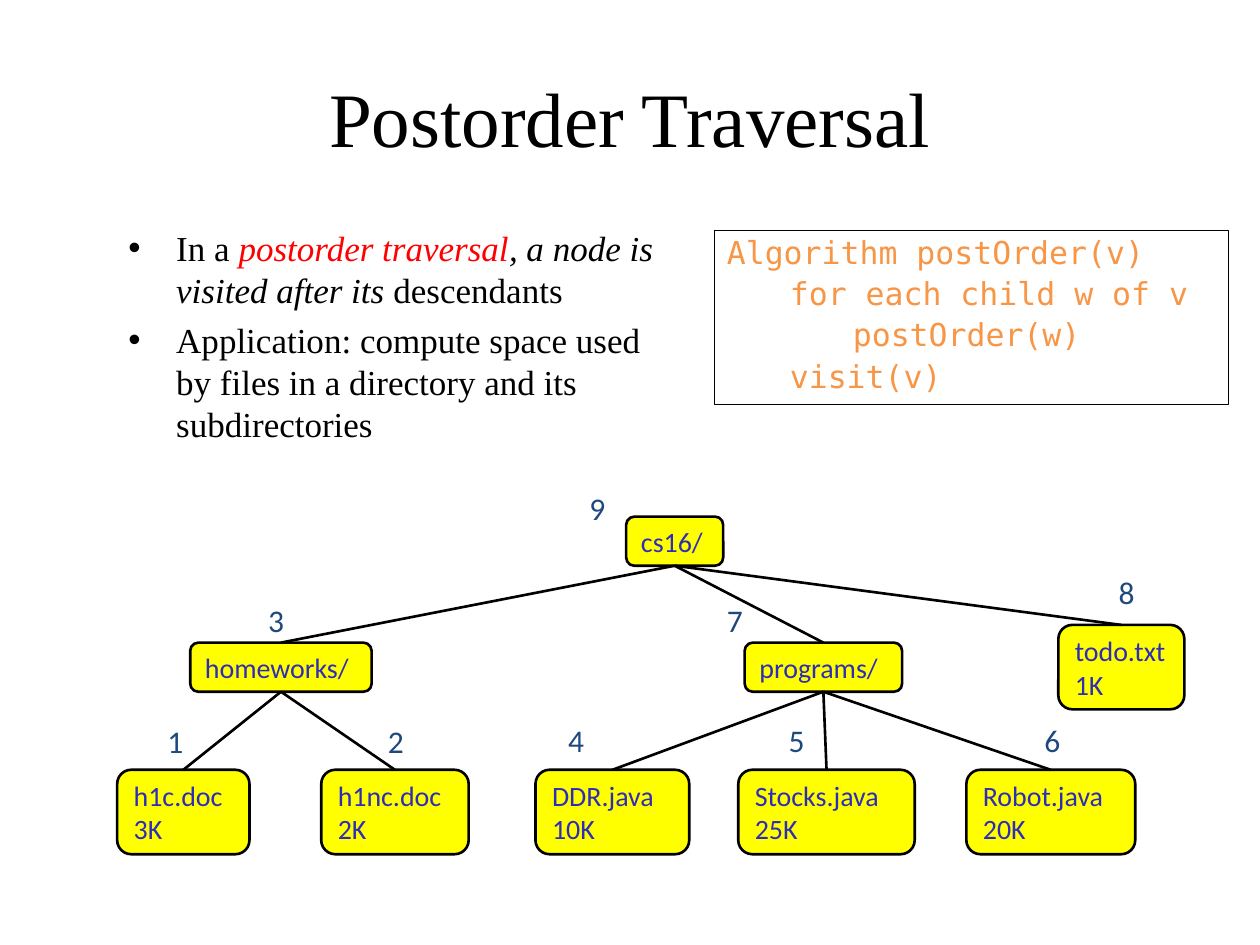
from lxml.etree import SubElement
from pptx import Presentation
from pptx.dml.color import RGBColor
from pptx.enum.shapes import MSO_CONNECTOR as CONN, MSO_SHAPE as SHAPE
from pptx.enum.text import MSO_ANCHOR as ANCHOR, MSO_AUTO_SIZE as AUTO, PP_ALIGN as ALIGN
from pptx.oxml.ns import qn
from pptx.util import Inches, Pt

COLORS = {"black": "000000", "red": "FF0000", "code": "F79646",
          "yellow": "FFFF00", "node": "2D2DB9", "order": "1F497D"}
SERIF, MONO, SANS = "Times New Roman", "DejaVu Sans Mono", "Calibri"
BOTTOM, TOP = 2, 0
ROOT_H, LEAF_H, LEAF_TOP = 0.39, 0.67, 6.11

# name: (parent, text, left, top, width, height)
NODES = {
    "cs16": (None, "cs16/", 4.97, 4.1, 0.77, ROOT_H),
    "homeworks": ("cs16", "homeworks/", 1.51, 5.1, 1.44, ROOT_H),
    "programs": ("cs16", "programs/", 5.91, 5.1, 1.25, ROOT_H),
    "todo": ("cs16", "todo.txt\n1K", 8.4, 4.96, 1, LEAF_H),
    "h1c": ("homeworks", "h1c.doc\n3K", 0.93, LEAF_TOP, 1.05, LEAF_H),
    "h1nc": ("homeworks", "h1nc.doc\n2K", 2.55, LEAF_TOP, 1.17, LEAF_H),
    "ddr": ("programs", "DDR.java\n10K", 4.25, LEAF_TOP, 1.22, LEAF_H),
    "stocks": ("programs", "Stocks.java\n25K", 5.86, LEAF_TOP, 1.4, LEAF_H),
    "robot": ("programs", "Robot.java\n20K", 7.67, LEAF_TOP, 1.34, LEAF_H),
}
# left and top of the visit numbers 1 to 9
VISITS = [(1.23, 5.68), (2.98, 5.68), (2.03, 4.72), (4.41, 5.67), (6.16, 5.67),
          (8.19, 5.67), (5.67, 4.72), (8.78, 4.5), (4.58, 3.83)]
BULLETS = [
    [("In a ", "black", False), ("postorder traversal", "red", True),
     (", a node is visited after its ", "black", True), ("descendants", "black", False)],
    [("Application: compute space used by files in a directory and its subdirectories",
      "black", False)],
]
CODE = ["Algorithm postOrder(v)", "for each child w of v", "\tpostOrder(w)", "visit(v)"]


def rgb(name):
    return RGBColor.from_string(COLORS[name])


def set_all(obj, **values):
    for name, value in values.items():
        setattr(obj, name, value)


def style_run(r, size, font, color, italic=False):
    set_all(r.font, size=Pt(size), name=font, italic=italic)
    r.font.color.rgb = rgb(color)


def write(p, text, *style):
    """Set a paragraph's text, line breaks included, in one style."""
    p.text = text
    for r in p.runs:
        style_run(r, *style)


def set_indent(p, left, first=0, bullet=None):
    pPr = p._p.get_or_add_pPr()
    pPr.set("marL", str(Inches(left)))
    pPr.set("indent", str(Inches(first)))
    if bullet:
        SubElement(pPr, qn("a:buFont"), typeface="Arial")
        SubElement(pPr, qn("a:buChar"), char=bullet)


def add_text(s, box, **frame):
    tf = s.shapes.add_textbox(*map(Inches, box)).text_frame
    set_all(tf, **{"word_wrap": True, "auto_size": AUTO.NONE, **frame})
    return tf


def paragraphs(tf, items):
    """Yield a paragraph of the frame with each item."""
    for i, item in enumerate(items):
        yield (tf.add_paragraph() if i else tf.paragraphs[0]), item


def add_box(s, kind, box, line_width, fill=None):
    sp = s.shapes.add_shape(kind, *map(Inches, box))
    sp.shadow.inherit = False
    if fill:
        sp.fill.solid()
        sp.fill.fore_color.rgb = rgb(fill)
    else:
        sp.fill.background()
    sp.line.color.rgb = rgb("black")
    sp.line.width = Pt(line_width)
    return sp


def add_title(s):
    p = add_text(s, (0.5, 0.3, 9, 1.25), vertical_anchor=ANCHOR.MIDDLE).paragraphs[0]
    write(p, "Postorder Traversal", 44, SERIF, "black")
    p.alignment = ALIGN.CENTER


def add_bullets(s):
    tf = add_text(s, (0.92, 1.75, 4.42, 2.33))
    for p, parts in paragraphs(tf, BULLETS):
        p.space_before = Pt(4.5)
        set_indent(p, 0.38, -0.38, "•")
        for text, color, italic in parts:
            r = p.add_run()
            r.text = text
            style_run(r, 20, SERIF, color, italic)


def add_code(s):
    tf = add_box(s, SHAPE.RECTANGLE, (5.67, 1.83, 4.08, 1.38), 0.75).text_frame
    set_all(tf, word_wrap=True, vertical_anchor=ANCHOR.TOP, auto_size=AUTO.SHAPE_TO_FIT_TEXT)
    for p, line in paragraphs(tf, CODE):
        write(p, line, 18, MONO, "code")
        set_all(p, alignment=ALIGN.LEFT, line_spacing=0.9, space_before=Pt(4.2))
        if line != CODE[0]:
            p.level = 1
            set_indent(p, 0.5)


def add_node(s, text, box):
    sp = add_box(s, SHAPE.ROUNDED_RECTANGLE, box, 1.5, "yellow")
    tf = sp.text_frame
    set_all(tf, word_wrap=False, vertical_anchor=ANCHOR.MIDDLE, auto_size=AUTO.SHAPE_TO_FIT_TEXT)
    p = tf.paragraphs[0]
    write(p, text, 16, SANS, "node")
    p.alignment = ALIGN.LEFT
    return sp


def add_edge(s, parent, child):
    line = s.shapes.add_connector(CONN.STRAIGHT, 0, 0, 0, 0)
    line.begin_connect(parent, BOTTOM)
    line.end_connect(child, TOP)
    line.line.color.rgb = rgb("black")
    line.line.width = Pt(1.5)
    SubElement(line._element.spPr, qn("a:effectLst"))


def add_tree(s):
    shapes = {name: add_node(s, text, box) for name, (_, text, *box) in NODES.items()}
    for name, (parent, *_) in NODES.items():
        if parent:
            add_edge(s, shapes[parent], shapes[name])
    for number, spot in enumerate(VISITS, 1):
        tf = add_text(s, (*spot, 0.35, 0.44), word_wrap=False, auto_size=AUTO.SHAPE_TO_FIT_TEXT)
        write(tf.paragraphs[0], str(number), 18, SANS, "order")


def main():
    prs = Presentation()
    set_all(prs, slide_width=Inches(10), slide_height=Inches(7.5))
    s = prs.slides.add_slide(prs.slide_layouts[6])
    add_title(s)
    add_bullets(s)
    add_code(s)
    add_tree(s)
    prs.save("out.pptx")


if __name__ == "__main__":
    main()
